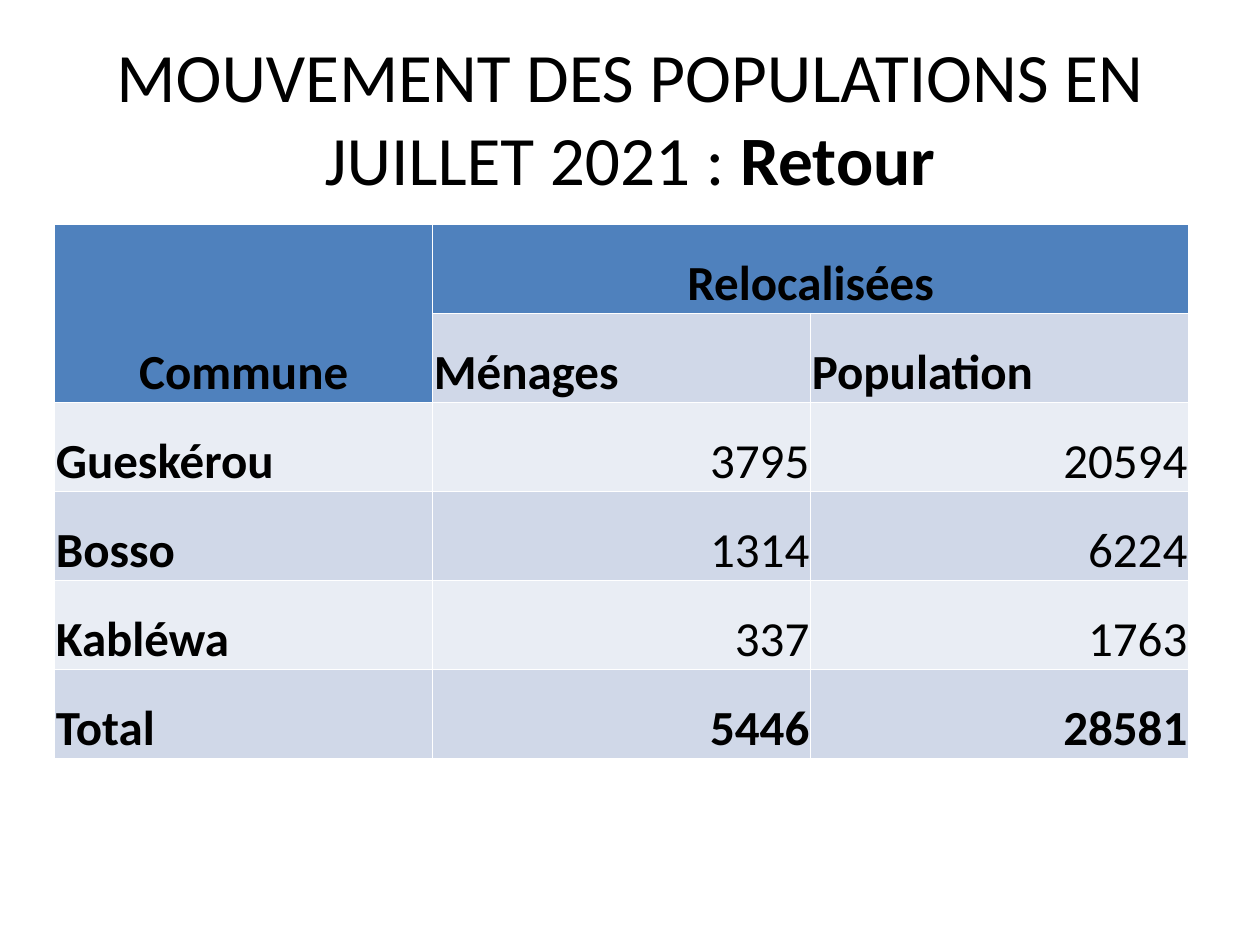
"""Build the slide on population returns in July 2021."""
from pptx import Presentation
from pptx.dml.color import RGBColor
from pptx.enum.text import MSO_ANCHOR, MSO_AUTO_SIZE, PP_ALIGN
from pptx.util import Pt

LEFT, CENTER, RIGHT = PP_ALIGN.LEFT, PP_ALIGN.CENTER, PP_ALIGN.RIGHT
MIDDLE, BOTTOM = MSO_ANCHOR.MIDDLE, MSO_ANCHOR.BOTTOM
NO_AUTOFIT = MSO_AUTO_SIZE.NONE
TITLE_ONLY = 5
COLORS = {"text": "000000", "header": "4F81BD", "dark band": "D0D8E8", "light band": "E9EDF4"}
ROWS = [
    ("Commune", "Relocalisées", ""),
    ("", "Ménages", "Population"),
    ("Gueskérou", "3795", "20594"),
    ("Bosso", "1314", "6224"),
    ("Kabléwa", "337", "1763"),
    ("Total", "5446", "28581"),
]
ROW_HEIGHT, COLUMN_WIDTH = 50.88, 216


def add_text(paragraph, text, size=28, bold=False, align=LEFT):
    paragraph.alignment = align
    run = paragraph.add_run()
    run.text = text
    run.font.name = "Calibri"
    run.font.size = Pt(size)
    run.font.bold = bold
    run.font.color.rgb = RGBColor.from_string(COLORS["text"])


presentation = Presentation()
presentation.slide_width, presentation.slide_height = Pt(720), Pt(540)
slide = presentation.slides.add_slide(presentation.slide_layouts[TITLE_ONLY])

title = slide.shapes.title
title.left, title.top, title.width, title.height = Pt(36), Pt(21.6), Pt(648), Pt(90)
title.text_frame.auto_size = NO_AUTOFIT
title.text_frame.vertical_anchor = MIDDLE
title_paragraph = title.text_frame.paragraphs[0]
add_text(title_paragraph, "MOUVEMENT DES POPULATIONS EN JUILLET 2021 :", size=39.6, align=CENTER)
add_text(title_paragraph, " Retour", size=39.6, bold=True, align=CENTER)

column_count = len(ROWS[0])
table = slide.shapes.add_table(
    len(ROWS), column_count, Pt(31.2), Pt(128.4),
    Pt(COLUMN_WIDTH * column_count), Pt(ROW_HEIGHT * len(ROWS)),
).table
for column in table.columns:
    column.width = Pt(COLUMN_WIDTH)
table.cell(0, 0).merge(table.cell(1, 0))
table.cell(0, 1).merge(table.cell(0, 2))

for row_index, values in enumerate(ROWS):
    table.rows[row_index].height = Pt(ROW_HEIGHT)
    band = "dark band" if row_index % 2 else "light band"
    for column_index, text in enumerate(values):
        if not text:
            continue
        cell = table.cell(row_index, column_index)
        is_header = row_index == 0
        is_number = text.isdigit()
        cell.fill.solid()
        cell.fill.fore_color.rgb = RGBColor.from_string(COLORS["header" if is_header else band])
        cell.margin_left = cell.margin_right = cell.margin_top = Pt(0.75)
        cell.margin_bottom = Pt(0)
        cell.vertical_anchor = BOTTOM
        add_text(
            cell.text_frame.paragraphs[0], text,
            bold=not is_number or values[0] == "Total",
            align=CENTER if is_header else RIGHT if is_number else LEFT,
        )

presentation.save("out.pptx")
